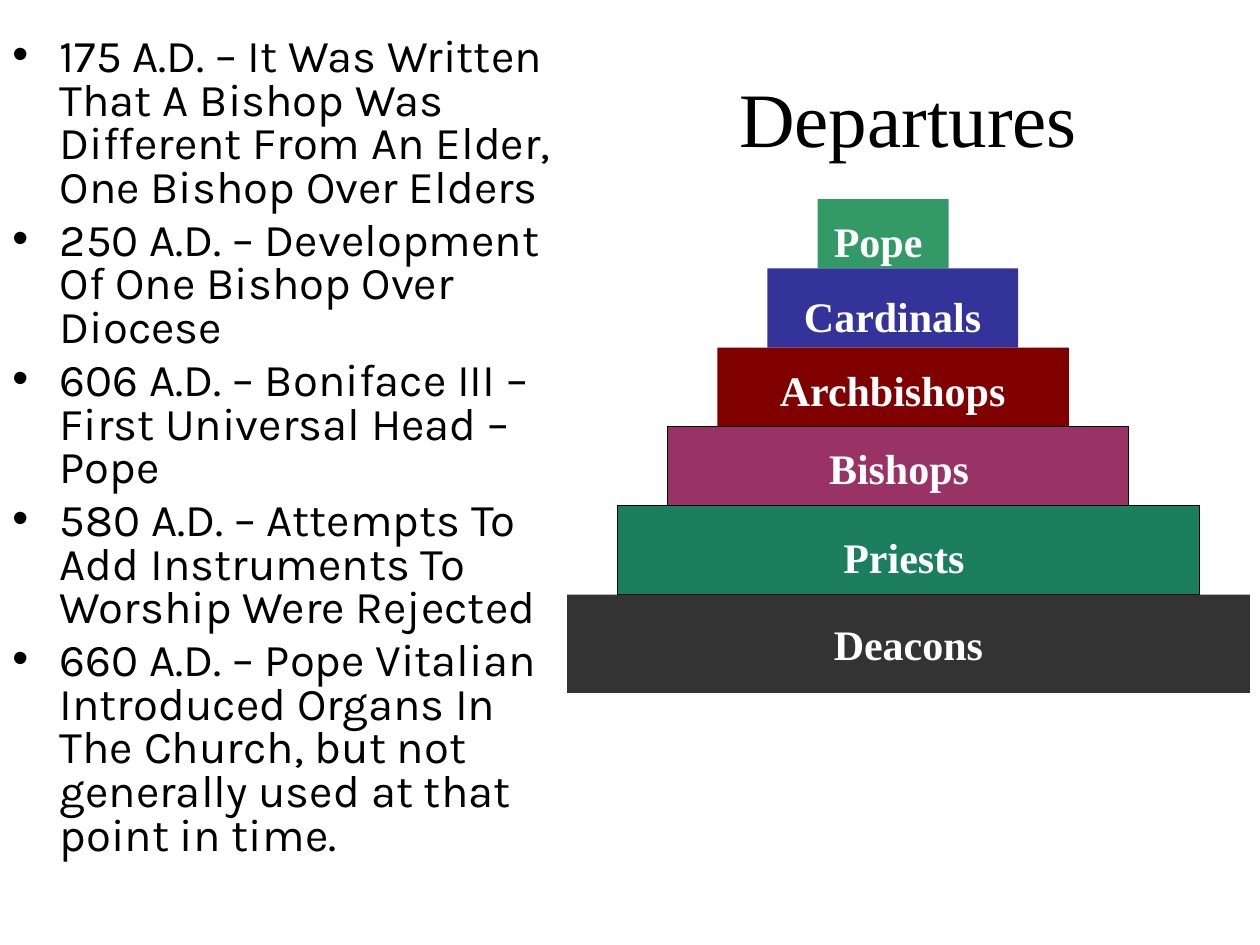
from pptx import Presentation
from pptx.dml.color import RGBColor
from pptx.enum.shapes import MSO_SHAPE as SHAPE
from pptx.enum.text import MSO_ANCHOR as ANCHOR, PP_ALIGN as ALIGN
from pptx.util import Pt
from lxml.etree import SubElement


def color(value):
    return RGBColor.from_string(value)


def add_run(p, text, size, font, hex_color, bold=False):
    r = p.add_run()
    r.text = text
    r.font.size = Pt(size)
    r.font.name = font
    r.font.bold = bold
    r.font.color.rgb = color(hex_color)


prs = Presentation()
prs.slide_width, prs.slide_height = Pt(720), Pt(540)
s = prs.slides.add_slide(prs.slide_layouts[6])

tf = s.shapes.add_textbox(Pt(354), Pt(21.6), Pt(330), Pt(90)).text_frame
tf.word_wrap = True
tf.vertical_anchor = ANCHOR.MIDDLE
p = tf.paragraphs[0]
p.alignment = ALIGN.CENTER
add_run(p, "Departures", 44, "Times New Roman", "000000")

events = [
    "175 A.D. – It Was Written That A Bishop Was Different From An Elder, One Bishop Over Elders",
    "250 A.D. – Development Of One Bishop Over Diocese",
    "606 A.D. – Boniface III – First Universal Head – Pope",
    "580 A.D. – Attempts To Add Instruments To Worship Were Rejected",
    "660 A.D. – Pope Vitalian Introduced Organs In The Church, but not generally used at that point in time.",
]
tf = s.shapes.add_textbox(Pt(0), Pt(18), Pt(336), Pt(522)).text_frame
tf.word_wrap = True
for i, event in enumerate(events):
    p = tf.add_paragraph() if i else tf.paragraphs[0]
    p.line_spacing = 0.8
    p.space_before = Pt(5.2)
    pPr = p._p.get_or_add_pPr()
    pPr.set("marL", str(Pt(27)))
    pPr.set("indent", str(-Pt(27)))
    ns = pPr.nsmap["a"]
    SubElement(pPr, f"{{{ns}}}buFont", typeface="Arial")
    SubElement(pPr, f"{{{ns}}}buChar", char="•")
    add_run(p, event, 26, "Karla", "000000")

# name, fill, outlined, left, width, height, label box (left, top, width)
tiers = [
    ("Pope", "339966", False, 467.3, 74.9, 39.6, (469.4, 119.5, 74.9)),
    ("Cardinals", "333399", False, 438.5, 143.3, 45.2, (435.6, 162.7, 149)),
    ("Archbishops", "800000", False, 409.9, 200.9, 45.2, (415.4, 204.5, 189.4)),
    ("Bishops", "993366", True, 381.4, 263.5, 45.2, (398.9, 249.1, 229.7)),
    ("Priests", "1B7F5E", True, 352.8, 332.6, 50.8, (398.9, 300.2, 235.4)),
    ("Deacons", "333333", False, 324, 390.2, 56.2, None),
]
top = 113.8
for name, fill, outlined, left, width, height, label in tiers:
    sp = s.shapes.add_shape(SHAPE.RECTANGLE, Pt(left), Pt(top), Pt(width), Pt(height))
    sp.shadow.inherit = False
    sp.fill.solid()
    sp.fill.fore_color.rgb = color(fill)
    if outlined:
        sp.line.color.rgb = color("000000")
        sp.line.width = Pt(0.75)
    else:
        sp.line.fill.background()
    if label:
        x, y, w = label
        sp = s.shapes.add_textbox(Pt(x), Pt(y), Pt(w), Pt(36))
    tf = sp.text_frame
    tf.word_wrap = bool(label)
    tf.vertical_anchor = ANCHOR.TOP if label else ANCHOR.MIDDLE
    p = tf.paragraphs[0]
    p.alignment = ALIGN.LEFT if name == "Pope" else ALIGN.CENTER
    add_run(p, name, 24, "Times New Roman", "FFFFFF", bold=True)
    top += height

prs.save("out.pptx")
